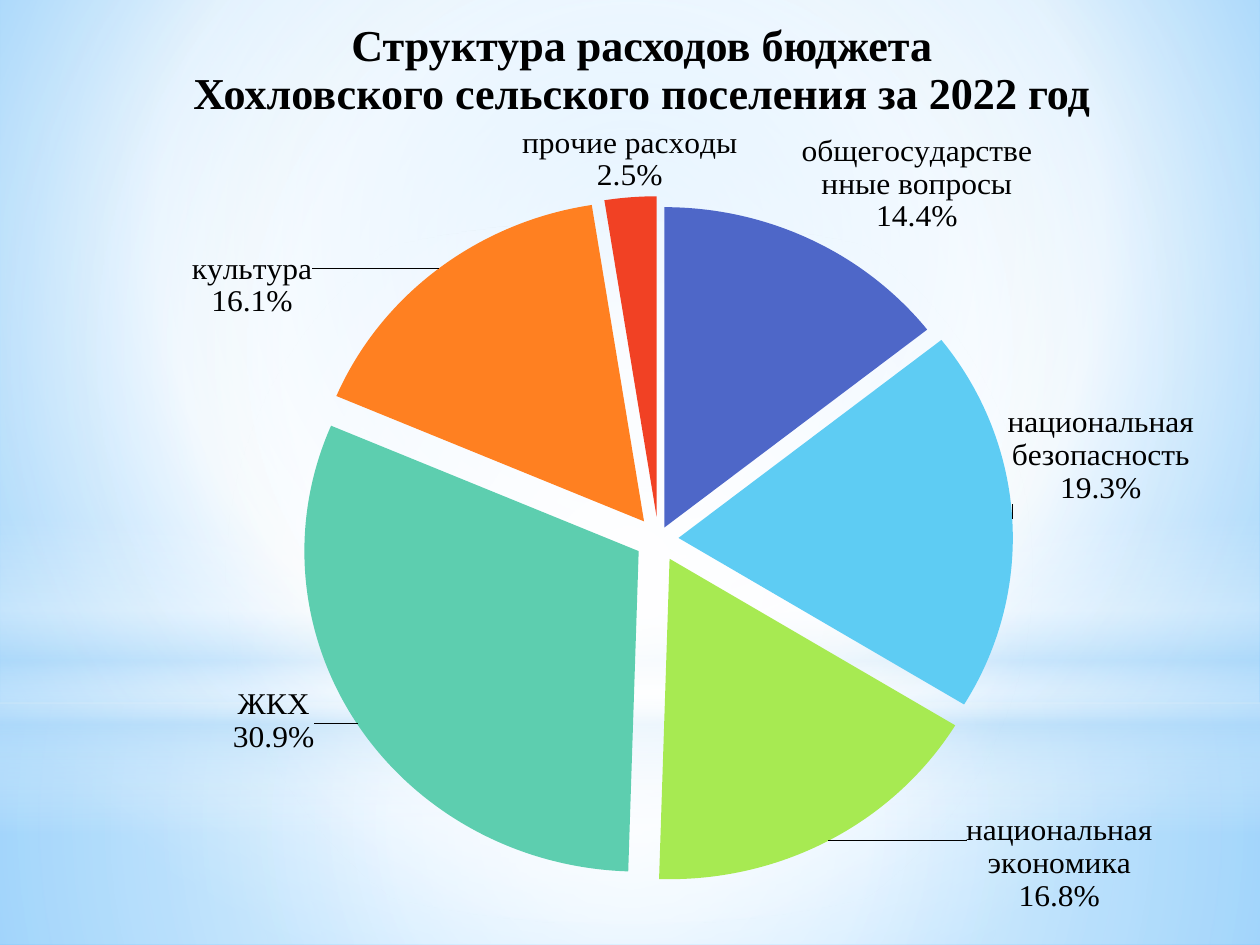
from copy import deepcopy

from pptx import Presentation
from pptx import util as u
from pptx.chart import data as chart_data
from pptx.dml.color import RGBColor
from pptx.enum import chart as chart_enum, shapes, text
from pptx.oxml import ns, parse_xml

BLACK = RGBColor(0x00, 0x00, 0x00)
WHITE = RGBColor(0xFF, 0xFF, 0xFF)
PALE_BLUE = RGBColor(0xB4, 0xDC, 0xFA)
SKY = RGBColor(0x9E, 0xD5, 0xFF)
DEEP_SKY = RGBColor(0x5B, 0xB9, 0xFF)
INDIGO = RGBColor(0x4E, 0x67, 0xC8)
CYAN = RGBColor(0x5E, 0xCC, 0xF3)
LIME = RGBColor(0xA7, 0xEA, 0x52)
TEAL = RGBColor(0x5D, 0xCE, 0xAF)
ORANGE = RGBColor(0xFF, 0x80, 0x21)
RED = RGBColor(0xF1, 0x41, 0x24)
SERIF = "Times New Roman"
SANS = "Cabin"

CENTRE = (50, 50, 50, 50)
EXPENSES = [
    ("общегосударственные вопросы", 0.144, INDIGO, 4, (-0.01, 0)),
    ("национальная безопасность", 0.193, CYAN, 6, (-0.01, -0.08)),
    ("национальная экономика", 0.168, LIME, 7, (0.11, -0.04)),
    ("ЖКХ", 0.309, TEAL, 7, (-0.03, -0.05)),
    ("культура", 0.161, ORANGE, 7, (-0.1, 0.07)),
    ("прочие расходы", 0.025, RED, 7, None),
]


def gradient(stops, focus=None):
    marks = "".join(
        f'<a:gs pos="{place * 1000}"><a:srgbClr val="{color}">'
        f'<a:alpha val="{opacity * 1000}"/></a:srgbClr></a:gs>'
        for place, color, opacity in stops
    )
    if focus:
        sides = " ".join(f'{side}="{value * 1000}"' for side, value in zip("ltrb", focus))
        course = f'<a:path path="circle"><a:fillToRect {sides}/></a:path>'
    else:
        course = '<a:lin ang="5400000" scaled="0"/>'
    return parse_xml(
        f'<a:gradFill {ns.nsdecls("a")} rotWithShape="1">'
        f"<a:gsLst>{marks}</a:gsLst>{course}</a:gradFill>"
    )


def set_gradient(fill, element, stops, focus=None):
    fill.solid()
    solid = element.xpath(".//a:solidFill")[0]
    solid.getparent().replace(solid, gradient(stops, focus))


def add_glow(slide, kind, box, stops, focus=None):
    glow = slide.shapes.add_shape(kind, *box)
    glow.shadow.inherit = False
    glow.line.fill.background()
    properties = glow.element.spPr
    line = properties.find(ns.qn("a:ln"))
    line.addprevious(gradient(stops, focus))


def add_backdrop(slide, left, top, width, height):
    set_gradient(
        slide.background.fill, slide.element.cSld,
        [(0, SKY, 100), (60, WHITE, 100), (100, DEEP_SKY, 100)], (20, 10, 20, 60),
    )
    horizon = u.Inches(5.58)
    rectangle = shapes.MSO_SHAPE.RECTANGLE
    add_glow(slide, rectangle, (left, top + horizon, width, height - horizon),
             [(0, WHITE, 91), (37, WHITE, 76), (100, PALE_BLUE, 79)], CENTRE)
    add_glow(slide, rectangle, (left, top, width, horizon),
             [(0, WHITE, 89), (48, WHITE, 62), (100, PALE_BLUE, 79)], CENTRE)
    add_glow(slide, rectangle, (left, top + u.Inches(4.12), width, u.Inches(2.5)),
             [(0, WHITE, 0), (29, WHITE, 30), (45, PALE_BLUE, 40),
              (55, WHITE, 26), (65, PALE_BLUE, 60), (100, WHITE, 0)])
    add_glow(slide, shapes.MSO_SHAPE.OVAL, (left, top + u.Inches(1.75), width, horizon),
             [(0, WHITE, 100), (56, WHITE, 0)], CENTRE)


def write_lines(frame, lines, *, font, size, color, bold, align, spacing):
    for index, line in enumerate(lines):
        para = frame.add_paragraph() if index else frame.paragraphs[0]
        para.alignment = align
        para.line_spacing = spacing
        para.space_before = u.Pt(0)
        span = para.add_run()
        span.text = line
        span.font.name = font
        span.font.size = u.Pt(size)
        span.font.bold = bold
        span.font.color.rgb = color


def place_title(slide, left, top, width, height):
    title = slide.shapes.title
    title.left, title.top, title.width, title.height = left, top, width, height
    frame = title.text_frame
    frame.word_wrap = True
    frame.auto_size = text.MSO_AUTO_SIZE.NONE
    frame.vertical_anchor = text.MSO_ANCHOR.MIDDLE
    write_lines(
        frame,
        ["Структура расходов бюджета", "Хохловского сельского поселения за 2022 год"],
        font=SERIF, size=25.2, color=BLACK, bold=True,
        align=text.PP_ALIGN.CENTER, spacing=0.9,
    )
    slide.shapes.element.append(title.element)


def manual_layout(x, y, size=None):
    target = edges = extent = ""
    if size:
        target = '<c:layoutTarget val="inner"/>'
        edges = '<c:xMode val="edge"/><c:yMode val="edge"/>'
        extent = f'<c:w val="{size[0]}"/><c:h val="{size[1]}"/>'
    return parse_xml(
        f'<c:layout {ns.nsdecls("c")}><c:manualLayout>{target}{edges}'
        f'<c:x val="{x}"/><c:y val="{y}"/>{extent}</c:manualLayout></c:layout>'
    )


def format_labels(chart, series):
    labels = series.data_labels
    labels.show_value = True
    labels.show_category_name = True
    labels.number_format = "0.0%"
    labels.number_format_is_linked = False
    labels.position = chart_enum.XL_LABEL_POSITION.BEST_FIT
    labels.font.name = SERIF
    labels.font.size = u.Pt(18)
    labels.font.color.rgb = BLACK
    group = chart.element.xpath(".//c:ser/c:dLbls")[0]
    separator = parse_xml(f'<c:separator {ns.nsdecls("c")}>\n</c:separator>')
    group.find(ns.qn("c:showBubbleSize")).addnext(separator)
    shared = [part for part in group if part.tag != ns.qn("c:showLeaderLines")]
    for index, (_, _, _, _, offset) in enumerate(EXPENSES):
        if offset:
            label = parse_xml(f'<c:dLbl {ns.nsdecls("c")}><c:idx val="{index}"/></c:dLbl>')
            label.append(manual_layout(*offset))
            label.extend(deepcopy(part) for part in shared)
            group.insert(index, label)


def add_expense_pie(slide, left, top, width, height):
    data = chart_data.CategoryChartData(number_format="0.0%")
    data.categories = [row[0] for row in EXPENSES]
    data.add_series("Series 1", [row[1] for row in EXPENSES])
    chart = slide.shapes.add_chart(
        chart_enum.XL_CHART_TYPE.PIE, left, top, width, height, data
    ).chart
    chart.has_title = False
    chart.has_legend = False
    chart.font.name = SANS
    chart.font.size = u.Pt(18)
    chart.font.color.rgb = BLACK
    plot = chart.plots[0]
    plot.vary_by_categories = True
    series = plot.series[0]
    for index, (_, _, color, explosion, _) in enumerate(EXPENSES):
        point = series.points[index]
        point.format.fill.solid()
        point.format.fill.fore_color.rgb = color
        point.format.line.fill.background()
        properties = chart.element.xpath(".//c:dPt/c:spPr")[index]
        properties.addprevious(
            parse_xml(f'<c:explosion {ns.nsdecls("c")} val="{explosion}"/>')
        )
    format_labels(chart, series)
    area = chart.element.xpath(".//c:plotArea")[0]
    for layout in area.xpath("./c:layout"):
        area.remove(layout)
    area.insert(0, manual_layout(0.25, 0.1, (0.55, 0.85)))


def main():
    deck = Presentation()
    deck.slide_width, deck.slide_height = u.Inches(10), u.Inches(7.5)
    slide = deck.slides.add_slide(deck.slide_layouts[5])
    add_backdrop(slide, 0, 0, deck.slide_width, deck.slide_height)
    place_title(slide, u.Inches(0.35), u.Inches(0.13), u.Inches(9.49), u.Inches(0.87))
    add_expense_pie(slide, u.Inches(0.16), u.Inches(0.99), u.Inches(9.65), u.Inches(6.51))
    deck.save("out.pptx")


if __name__ == "__main__":
    main()
